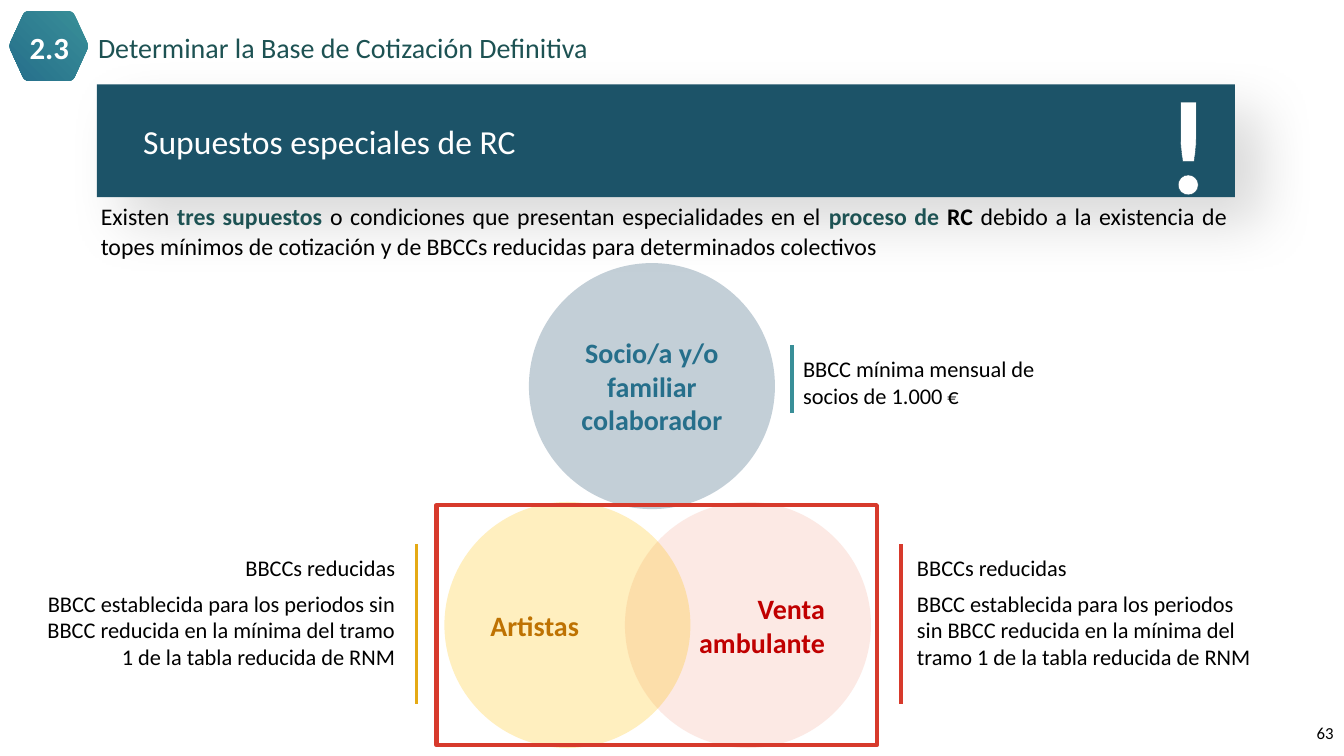
from lxml import etree
from pptx import Presentation
from pptx.dml.color import RGBColor
from pptx.enum.shapes import MSO_CONNECTOR as Connector, MSO_SHAPE as Shape
from pptx.enum.text import MSO_ANCHOR as Anchor, MSO_AUTO_SIZE as AutoSize, PP_ALIGN as Align
from pptx.oxml import parse_xml
from pptx.oxml.ns import nsdecls, qn
from pptx.util import Cm, Pt

FONT = "Calibri"
COLORS = {
    "black": "000000", "white": "FFFFFF", "green": "1D5253", "band": "1C5368",
    "outline": "194A5D", "blue": "266F8B", "teal": "398F98", "navy": "124163",
    "red": "D73A2C", "dark red": "C00000", "salmon": "F4AA96",
    "yellow": "FFC000", "gold": "E5AA15", "brown": "BE7202",
}
REDUCED = [
    "BBCCs reducidas",
    "BBCC establecida para los periodos sin BBCC reducida en la mínima del tramo 1 "
    "de la tabla reducida de RNM",
]


def rgb(name):
    return RGBColor.from_string(COLORS[name])


def set_frame(frame, inset=(0.25, 0.13), anchor=Anchor.TOP):
    frame.word_wrap = True
    frame.auto_size = AutoSize.NONE
    frame.vertical_anchor = anchor
    frame.margin_left = frame.margin_right = Cm(inset[0])
    frame.margin_top = frame.margin_bottom = Cm(inset[1])


def style(para, size, color="black", bold=False, align=Align.LEFT, spacing=None, after=0):
    para.alignment = align
    para.line_spacing = spacing
    para.space_before = Pt(0)
    para.space_after = Pt(after)
    font = para.font
    font.name, font.size, font.bold = FONT, Pt(size), bold
    font.color.rgb = rgb(color)


def add_text(page, box, lines, size, inset=(0.25, 0.13), anchor=Anchor.TOP, **look):
    frame = page.shapes.add_textbox(*map(Cm, box)).text_frame
    set_frame(frame, inset, anchor)
    for index, line in enumerate(lines):
        para = frame.paragraphs[0] if index == 0 else frame.add_paragraph()
        para.text = line
        style(para, size, **look)
    return frame


def add_filled(page, kind, box, color, alpha=None):
    shape = page.shapes.add_shape(kind, *map(Cm, box))
    shape.shadow.inherit = False
    shape.line.fill.background()
    shape.fill.solid()
    shape.fill.fore_color.rgb = rgb(color)
    if alpha:
        tint = shape.fill._xPr.find(".//" + qn("a:srgbClr"))
        etree.SubElement(tint, qn("a:alpha")).set("val", str(alpha * 1000))
    return shape


def add_bar(page, x, top, height, color):
    bar = page.shapes.add_connector(Connector.STRAIGHT, Cm(x), Cm(top), Cm(x), Cm(top + height))
    bar.line.color.rgb = rgb(color)
    bar.line.width = Pt(2.5)
    etree.SubElement(bar._element.spPr, qn("a:effectLst"))


def add_badge(page, box, number):
    """Rounded hexagon holding the section number."""
    left, top, width, height = box
    corners = [(left + fx * width, top + fy * height) for fx, fy in
               ((0.2, 0), (0.8, 0), (1, 0.5), (0.8, 1), (0.2, 1), (0, 0.5))]

    def toward(start, end, length=0.12):
        dx, dy = end[0] - start[0], end[1] - start[1]
        part = length / (dx * dx + dy * dy) ** 0.5
        return start[0] + part * dx, start[1] + part * dy

    points = []
    for index, corner in enumerate(corners):
        before = toward(corner, corners[index - 1])
        after = toward(corner, corners[(index + 1) % 6])
        for step in range(5):
            t = step / 4
            points.append([Cm((1 - t) ** 2 * a + 2 * t * (1 - t) * b + t * t * c)
                           for a, b, c in zip(before, corner, after)])
    builder = page.shapes.build_freeform(*points[0])
    builder.add_line_segments(points[1:], close=True)
    hexagon = builder.convert_to_shape()
    hexagon.shadow.inherit = False
    hexagon.line.fill.background()
    gradient = parse_xml(
        f'<a:gradFill {nsdecls("a")}><a:gsLst>'
        f'<a:gs pos="0"><a:srgbClr val="{COLORS["blue"]}"/></a:gs>'
        f'<a:gs pos="100000"><a:srgbClr val="{COLORS["teal"]}"/></a:gs></a:gsLst>'
        '<a:path path="circle"><a:fillToRect t="100000" r="100000"/></a:path></a:gradFill>')
    hexagon._element.spPr.find(qn("a:custGeom")).addnext(gradient)
    add_text(page, (left + 0.2, top + 0.61, 1.65, 0.76), [number], 22, (0.25, 0), Anchor.MIDDLE,
             color="white", bold=True, align=Align.CENTER, spacing=0.8)


def add_header(page, box):
    left, top, width, height = box
    title = page.shapes.title
    title.left, title.top = Cm(left + 2), Cm(top + 0.48)
    title.width, title.height = Cm(width - 2), Cm(1)
    set_frame(title.text_frame)
    title.text_frame.text = "Determinar la Base de Cotización Definitiva"
    style(title.text_frame.paragraphs[0], 20, "green", spacing=0.85, after=6)
    add_badge(page, (left, top, 2.02, height), "2.3")


def add_band(page, box):
    left, top, width, height = box
    band = add_filled(page, Shape.RECTANGLE, box, "band")
    effects = band._element.spPr.find(qn("a:effectLst"))
    effects.append(parse_xml(
        f'<a:outerShdw {nsdecls("a")} blurRad="{Pt(40)}" dist="{Pt(26)}" dir="2700000" '
        f'algn="tl" rotWithShape="0"><a:srgbClr val="{COLORS["black"]}">'
        '<a:alpha val="15000"/></a:srgbClr></a:outerShdw>'))
    add_text(page, (left + 0.92, top + 0.39, width - 4, height - 0.78),
             ["Supuestos especiales de RC"], 24, anchor=Anchor.MIDDLE, color="white")
    mark = add_text(page, (left + width - 2.65, top - 0.76, 2.95, 4.37), ["!"], 96,
                    color="white", bold=True, align=Align.CENTER)
    mark.paragraphs[0].runs[0].font._element.insert(0, parse_xml(
        f'<a:ln {nsdecls("a")} w="{Pt(1.75)}"><a:solidFill>'
        f'<a:srgbClr val="{COLORS["outline"]}"/></a:solidFill></a:ln>'))


def add_intro(page, box):
    para = add_text(page, box, [""], 17, align=Align.JUSTIFY, spacing=1.07, after=8).paragraphs[0]
    for text, color, bold in (
            ("Existen ", "black", False),
            ("tres supuestos ", "green", True),
            ("o condiciones que presentan especialidades en el ", "black", False),
            ("proceso de ", "green", True),
            ("RC ", "black", True),
            ("debido a la existencia de topes mínimos de cotización y de BBCCs reducidas "
             "para determinados colectivos", "black", False)):
        span = para.add_run()
        span.text = text
        span.font.bold = bold
        span.font.color.rgb = rgb(color)


def add_circles(page, box):
    left, top, width, height = box
    size = 6.2
    low = top + height - size
    for x, y, fill, text, color, align, inset in (
            (left + width - size, low, "salmon", "Venta ambulante", "dark red",
             Align.RIGHT, (0.25, 0.13)),
            (left, low, "yellow", "Artistas", "brown", Align.LEFT, (0.25, 0.13)),
            (left + 2.13, top, "navy", "Socio/a y/o familiar colaborador", "blue",
             Align.CENTER, (0, 0))):
        circle = add_filled(page, Shape.OVAL, (x, y, size, size), fill, 25)
        set_frame(circle.text_frame, inset, Anchor.MIDDLE)
        circle.text_frame.text = text
        style(circle.text_frame.paragraphs[0], 20, color, True, align)
    # Frame around the two lower circles
    border = page.shapes.add_shape(Shape.RECTANGLE, Cm(left - 0.2), Cm(low + 0.08),
                                   Cm(width + 0.35), Cm(6.05))
    border.shadow.inherit = False
    border.fill.background()
    border.line.color.rgb = rgb("red")
    border.line.width = Pt(3)


def add_note(page, box, lines, bar_x, bar_height, color, align=Align.LEFT):
    add_text(page, box, lines, 16, (0, 0), align=align, after=6)
    add_bar(page, bar_x, box[1] - 0.25, bar_height, color)


def build_slide(deck):
    page = deck.slides.add_slide(deck.slide_layouts[5])
    add_text(page, (26.24, 17.96, 7.62, 1.02), ["63"], 12, anchor=Anchor.MIDDLE,
             align=Align.RIGHT)
    # Side notes
    add_note(page, (20.24, 8.95, 6.58, 1.37), ["BBCC mínima mensual de socios de 1.000 €"],
             19.96, 1.7, "teal")
    add_note(page, (23.11, 13.97, 8.53, 2.95), REDUCED, 22.71, 4.01, "red")
    add_note(page, (1.17, 13.97, 8.79, 2.95), REDUCED, 10.49, 4.01, "gold", Align.RIGHT)
    # Main regions
    add_circles(page, (11.2, 6.63, 10.75, 12.22))
    add_band(page, (2.44, 2.13, 28.68, 2.84))
    add_intro(page, (2.29, 4.9, 28.88, 1.78))
    add_header(page, (0.22, 0.28, 31.42, 1.76))


def main():
    deck = Presentation()
    deck.slide_width, deck.slide_height = Cm(33.87), Cm(19.05)
    build_slide(deck)
    deck.save("out.pptx")


if __name__ == "__main__":
    main()
